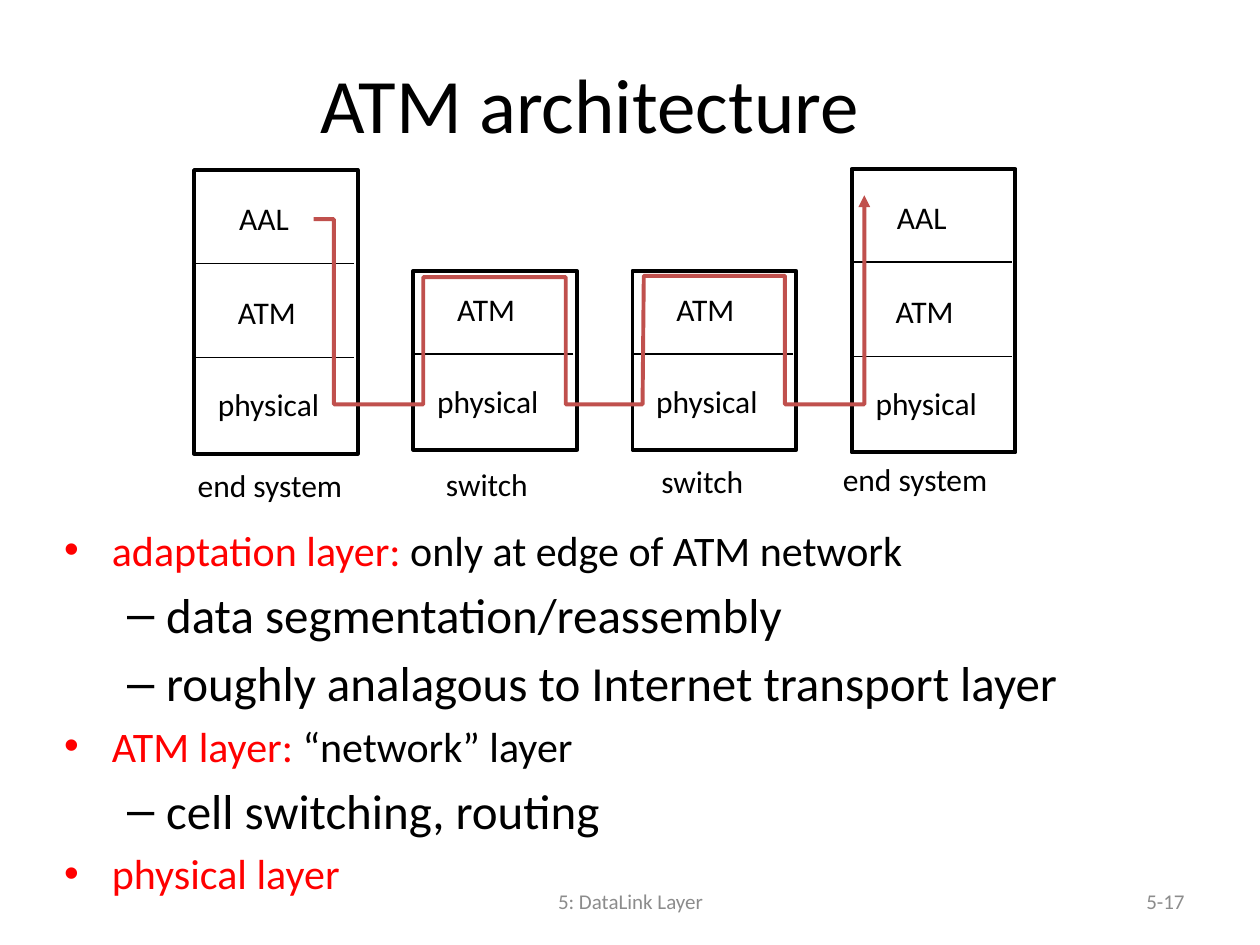
"""Build the ATM architecture slide: protocol stacks, the data path and notes."""
import pptx
import pptx.util
import pptx.dml.color
import pptx.enum.shapes
import pptx.enum.text
import pptx.oxml.ns
import lxml.etree

PX = 9144
BLACK = pptx.dml.color.RGBColor(0x00, 0x00, 0x00)
WHITE = pptx.dml.color.RGBColor(0xFF, 0xFF, 0xFF)
RED = pptx.dml.color.RGBColor(0xFF, 0x00, 0x00)
BRICK = pptx.dml.color.RGBColor(0xC0, 0x50, 0x4D)
GRAY = pptx.dml.color.RGBColor(0x8C, 0x8C, 0x8C)
ALIGN = pptx.enum.text.PP_ALIGN
MIDDLE = pptx.enum.text.MSO_ANCHOR.MIDDLE
FIT = pptx.enum.text.MSO_AUTO_SIZE.SHAPE_TO_FIT_TEXT
qn = pptx.oxml.ns.qn

deck = pptx.Presentation()
deck.slide_width, deck.slide_height = 1000 * PX, 750 * PX
slide = deck.slides.add_slide(deck.slide_layouts[6])
shapes = slide.shapes


def style(run, size, color):
    run.font.name = "Calibri"
    run.font.size = pptx.util.Pt(size)
    run.font.color.rgb = color


def label(text, x, y, w, h=40, size=18, color=BLACK, align=None):
    box = shapes.add_textbox(x * PX, y * PX, w * PX, h * PX)
    frame = box.text_frame
    frame.text = text
    frame.word_wrap = align is not None
    if align is None:
        frame.auto_size = FIT
    else:
        frame.vertical_anchor = MIDDLE
        frame.paragraphs[0].alignment = align
    style(frame.paragraphs[0].runs[0], size, color)


label("5: DataLink Layer", 342, 695, 317, size=12, color=GRAY, align=ALIGN.CENTER)
label("5-17", 717, 695, 233, size=12, color=GRAY, align=ALIGN.RIGHT)
label("ATM architecture ", 50, 19, 850, 125, 44, align=ALIGN.CENTER)

notes = [
    (0, "adaptation layer:", " only at edge of ATM network"),
    (1, "", "data segmentation/reassembly"),
    (1, "", "roughly analagous to Internet transport layer"),
    (0, "ATM layer:", " “network” layer"),
    (1, "", "cell switching, routing"),
    (0, "physical layer", ""),
]
looks = [(24, 38, 38, "•"), (28, 81, 31, "–")]
body = shapes.add_textbox(41 * PX, 411 * PX, 871 * PX, 292 * PX).text_frame
body.word_wrap = True
for i, (level, term, rest) in enumerate(notes):
    para = body.add_paragraph() if i else body.paragraphs[0]
    size, left, hang, mark = looks[level]
    para.level = level
    para.space_before = pptx.util.Pt(size * 0.2)
    for text, color in ((term, RED), (rest, BLACK)):
        if text:
            run = para.add_run()
            run.text = text
            style(run, size, color)
    props = para._p.get_or_add_pPr()
    props.set("marL", str(left * PX))
    props.set("indent", str(-hang * PX))
    lxml.etree.SubElement(props, qn("a:buFont")).set("typeface", "Arial")
    lxml.etree.SubElement(props, qn("a:buChar")).set("char", mark)

widths = {"AAL": 70, "ATM": 77, "physical": 112}
insets = {"AAL": 26, "ATM": 25, "physical": 9}
end = [("AAL", 18), ("ATM", 93), ("physical", 166)]
switch = [("ATM", 10), ("physical", 83)]
stacks = [
    (154, 135, 225, end, (149, 74)),
    (676, 134, 225, end, (149, 74)),
    (328, 215, 142, switch, (66,)),
    (502, 215, 142, switch, (66,)),
]
for x, y, h, layers, splits in stacks:
    rect = shapes.add_shape(pptx.enum.shapes.MSO_SHAPE.RECTANGLE,
                            x * PX, y * PX, 130 * PX, h * PX)
    rect.shadow.inherit = False
    rect.fill.solid()
    rect.fill.fore_color.rgb = WHITE
    rect.line.color.rgb = BLACK
    rect.line.width = pptx.util.Pt(2.25)
    for dy in splits:
        rule = shapes.add_connector(pptx.enum.shapes.MSO_CONNECTOR.STRAIGHT,
                                    (x + 127) * PX, (y + dy) * PX,
                                    (x + 1) * PX, (y + dy) * PX)
        rule.line.color.rgb = BLACK
        rule.line.width = pptx.util.Pt(0.75)
        lxml.etree.SubElement(rule._element.spPr, qn("a:effectLst"))
    for name, dy in layers:
        label(name, x + insets[name], y + dy, widths[name])

route = [(265, 174), (265, 321), (336, 321), (336, 220), (449, 220), (449, 321),
         (510, 321), (511, 219), (623, 219), (623, 321), (686, 321), (686, 155)]
maker = shapes.build_freeform(249, 174, scale=PX)
maker.add_line_segments(route, close=False)
flow = maker.convert_to_shape()
flow.shadow.inherit = False
flow.fill.background()
flow.line.color.rgb = BRICK
flow.line.width = pptx.util.Pt(2.25)
lxml.etree.SubElement(flow.line._get_or_add_ln(), qn("a:tailEnd")).set("type", "triangle")

for text, x, y, w in [("end system", 147, 365, 151), ("end system", 659, 360, 151),
                      ("switch", 344, 364, 95), ("switch", 515, 362, 95)]:
    label(text, x, y, w)

deck.save("out.pptx")
